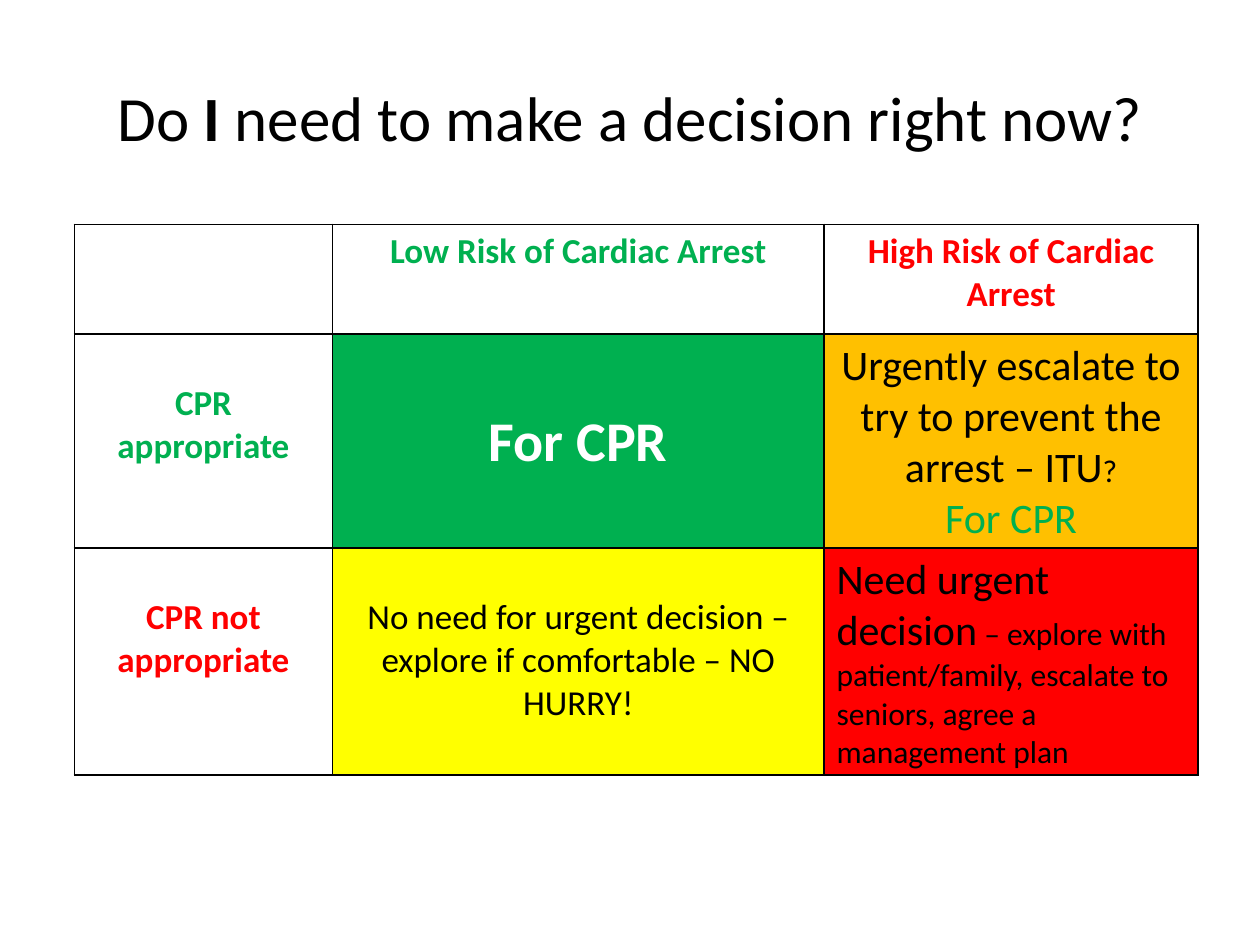
from lxml import etree
from pptx import Presentation
from pptx.dml.color import RGBColor
from pptx.enum.text import MSO_ANCHOR, PP_ALIGN
from pptx.oxml.ns import qn
from pptx.util import Inches, Pt

CENTER, LEFT = PP_ALIGN.CENTER, PP_ALIGN.LEFT
MIDDLE = MSO_ANCHOR.MIDDLE
FONT = "Calibri"
BLACK, WHITE = "000000", "FFFFFF"
GREEN, RED, AMBER, YELLOW = "00B050", "FF0000", "FFC000", "FFFF00"
COLUMNS = (2.05, 3.9, 2.97)
ROWS = (0.87, 1.65, 1.65)
CELL_MARGIN = 0.05
LINE_HEIGHT = 1.22  # share of the font size

# Each cell: fill, size of the line left free above the text, alignment,
# paragraphs of (text, size, colour, bold) spans.
CELLS = (
    (
        (WHITE, 0, CENTER, []),
        (WHITE, 0, CENTER, [[("Low Risk of Cardiac Arrest", 20, GREEN, True)]]),
        (WHITE, 0, CENTER, [[("High Risk of Cardiac Arrest", 20, RED, True)]]),
    ),
    (
        (WHITE, 20, CENTER, [[("CPR appropriate", 20, GREEN, True)]]),
        (GREEN, 32, CENTER, [[("For CPR", 32, WHITE, True)]]),
        (AMBER, 0, CENTER, [
            [("Urgently escalate to try to prevent the arrest – ITU", 24, BLACK, False),
             ("?", 18, BLACK, False)],
            [("For CPR", 24, GREEN, False)],
        ]),
    ),
    (
        (WHITE, 20, CENTER, [[("CPR not appropriate", 20, RED, True)]]),
        (YELLOW, 20, CENTER, [
            [("No need for urgent decision – explore if comfortable – NO HURRY!",
              20, BLACK, False)],
        ]),
        (RED, 0, LEFT, [
            [("Need urgent decision", 24, BLACK, False),
             (" – explore with patient/family, escalate to seniors, agree a management plan",
              18, BLACK, False)],
        ]),
    ),
)


def rgb(value):
    return RGBColor.from_string(value)


def write(frame, paragraphs, align):
    for index, spans in enumerate(paragraphs):
        para = frame.paragraphs[0] if index == 0 else frame.add_paragraph()
        para.alignment = align
        for text, size, colour, bold in spans:
            span = para.add_run()
            span.text = text
            span.font.name = FONT
            span.font.size = Pt(size)
            span.font.bold = bold
            span.font.color.rgb = rgb(colour)


def add_title(page):
    box = page.shapes.add_textbox(Inches(0.5), Inches(0.3), Inches(9), Inches(1.25))
    frame = box.text_frame
    frame.word_wrap = True
    frame.vertical_anchor = MIDDLE
    write(frame, [[
        ("Do ", 36, BLACK, False),
        ("I ", 36, BLACK, True),
        ("need to make a decision right now?", 36, BLACK, False),
    ]], CENTER)


def add_borders(cell):
    properties = cell._tc.get_or_add_tcPr()
    for side in ("a:lnL", "a:lnR", "a:lnT", "a:lnB"):
        line = etree.SubElement(properties, qn(side), w=str(Pt(1)))
        fill = etree.SubElement(line, qn("a:solidFill"))
        etree.SubElement(fill, qn("a:srgbClr"), val=BLACK)


def add_decision_table(page):
    table = page.shapes.add_table(
        len(ROWS), len(COLUMNS), Inches(0.59), Inches(1.78),
        Inches(sum(COLUMNS)), Inches(sum(ROWS))).table
    table.first_row = False
    table.horz_banding = False
    for column, width in zip(table.columns, COLUMNS):
        column.width = Inches(width)
    for row, height, contents in zip(table.rows, ROWS, CELLS):
        row.height = Inches(height)
        for cell, (fill, free_line, align, paragraphs) in zip(row.cells, contents):
            add_borders(cell)
            cell.fill.solid()
            cell.fill.fore_color.rgb = rgb(fill)
            cell.margin_top = Inches(CELL_MARGIN) + Pt(round(free_line * LINE_HEIGHT))
            write(cell.text_frame, paragraphs, align)


def main():
    deck = Presentation()
    deck.slide_width, deck.slide_height = Inches(10), Inches(7.5)
    page = deck.slides.add_slide(deck.slide_layouts[6])
    add_title(page)
    add_decision_table(page)
    deck.save("out.pptx")


if __name__ == "__main__":
    main()
